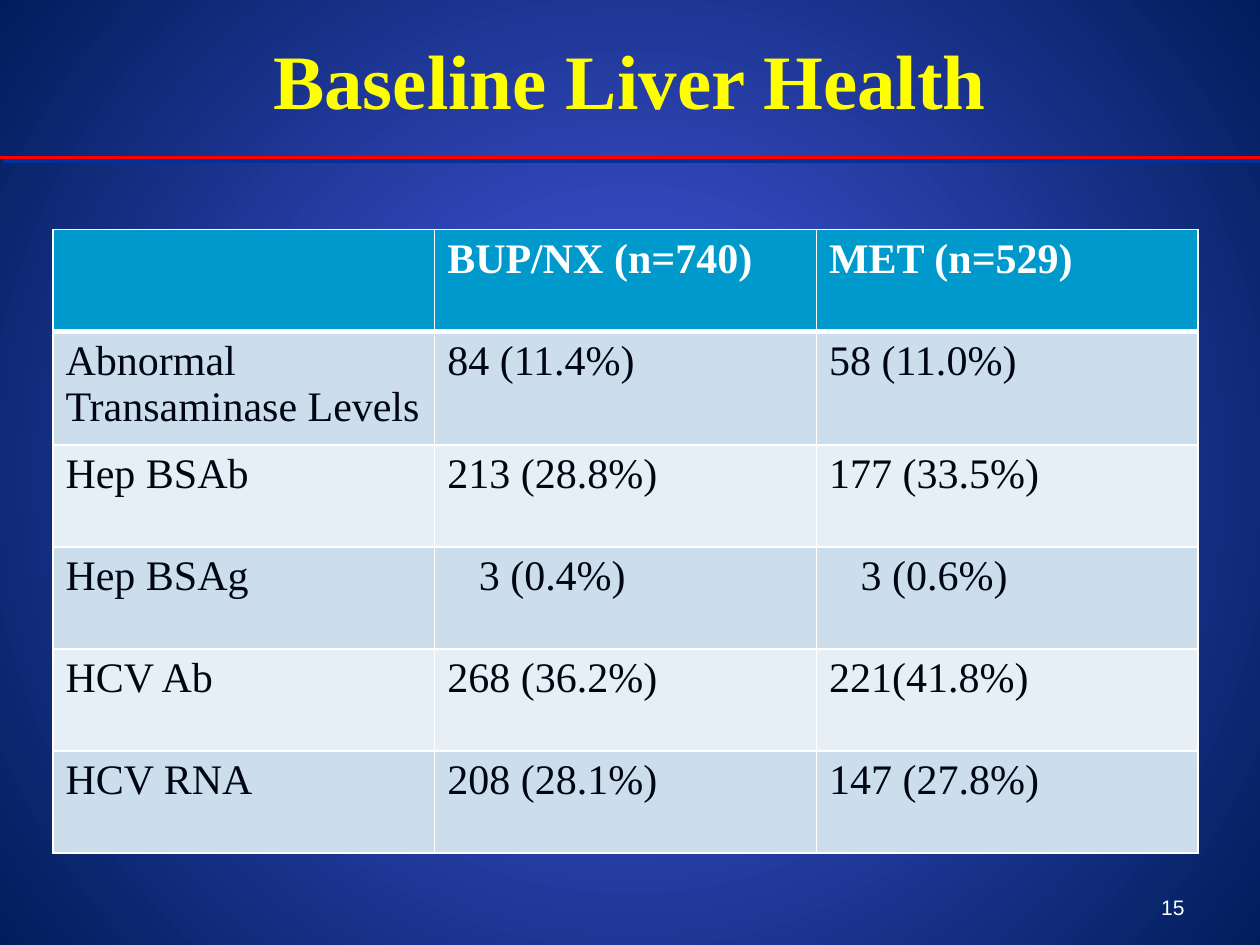
from lxml import etree
from pptx import Presentation
from pptx.dml.color import RGBColor
from pptx.enum.shapes import MSO_CONNECTOR
from pptx.enum.text import MSO_ANCHOR, PP_ALIGN
from pptx.oxml.ns import qn
from pptx.util import Inches, Pt

STRAIGHT = MSO_CONNECTOR.STRAIGHT
MIDDLE, BOTTOM = MSO_ANCHOR.MIDDLE, MSO_ANCHOR.BOTTOM
CENTER, RIGHT = PP_ALIGN.CENTER, PP_ALIGN.RIGHT

SERIF, SANS = "Times New Roman", "Arial"
TITLE = "Baseline Liver Health"
PAGE = "15"
ROWS = [
    ("", "BUP/NX (n=740)", "MET (n=529)"),
    ("Abnormal Transaminase Levels", "84 (11.4%)", "58 (11.0%)"),
    ("Hep BSAb", "213 (28.8%)", "177 (33.5%)"),
    ("Hep BSAg", "3 (0.4%)", "3 (0.6%)"),
    ("HCV Ab", "268 (36.2%)", "221(41.8%)"),
    ("HCV RNA", "208 (28.1%)", "147 (27.8%)"),
]
INDENTED_ROW = 3
HEADER_FILL, BANDS = "0099CC", ("E7EFF6", "CCDEEC")
COL_W, ROW_H = 3.03, 0.81


def rgb(value):
    return RGBColor.from_string(value)


def add_xml(parent, tag, **attrs):
    return etree.SubElement(parent, qn(tag), attrs)


def style(tf, size, font, color, bold=False, align=None):
    for p in tf.paragraphs:
        p.alignment = align
        for r in p.runs:
            r.font.size = Pt(size)
            r.font.name = font
            r.font.bold = bold
            r.font.color.rgb = rgb(color)


def add_text(slide, text, box, anchor, *look, **options):
    tf = slide.shapes.add_textbox(*map(Inches, box)).text_frame
    tf.word_wrap = True
    tf.vertical_anchor = anchor
    tf.text = text
    style(tf, *look, **options)


def add_borders(cell, top, bottom):
    tc_pr = cell._tc.get_or_add_tcPr()
    for side, width in (("L", 1), ("R", 1), ("T", top), ("B", bottom)):
        ln = add_xml(tc_pr, "a:ln" + side, w=str(Pt(width)))
        add_xml(add_xml(ln, "a:solidFill"), "a:srgbClr", val="FFFFFF")


def set_background(slide):
    fill = slide.background.fill
    fill.gradient()
    for stop, color in zip(fill.gradient_stops, ("4A5AE9", "001E5B")):
        stop.color.rgb = rgb(color)
    for stop, position in zip(fill.gradient_stops, (0, 1)):
        stop.position = position
    grad = slide._element.find(".//" + qn("a:gradFill"))
    grad.remove(grad.find(qn("a:lin")))
    circle = add_xml(grad, "a:path", path="circle")
    add_xml(circle, "a:fillToRect", l="50000", t="50000", r="50000", b="50000")


def add_rule(slide):
    rule = slide.shapes.add_connector(
        STRAIGHT, Inches(0), Inches(1.25), Inches(10), Inches(1.25))
    rule.line.color.rgb = rgb("FF0000")
    rule.line.width = Pt(2.25)
    effects = add_xml(rule._element.spPr, "a:effectLst")
    shadow = add_xml(effects, "a:outerShdw", dist=str(Pt(2.8)), dir="2700000")
    add_xml(shadow, "a:srgbClr", val="003399")


def add_results(slide):
    n_rows, n_cols = len(ROWS), len(ROWS[0])
    table = slide.shapes.add_table(
        n_rows, n_cols, Inches(0.42), Inches(1.82),
        Inches(COL_W * n_cols), Inches(ROW_H * n_rows)).table
    for col in table.columns:
        col.width = Inches(COL_W)
    for i, values in enumerate(ROWS):
        table.rows[i].height = Inches(ROW_H)
        header = i == 0
        for j, value in enumerate(values):
            cell = table.cell(i, j)
            add_borders(cell, 3 if i == 1 else 1, 3 if header else 1)
            cell.fill.solid()
            cell.fill.fore_color.rgb = rgb(HEADER_FILL if header else BANDS[i % 2])
            if i == INDENTED_ROW and j > 0:
                cell.margin_left = Inches(0.35)
            cell.text_frame.text = value
            style(cell.text_frame, 24, SERIF,
                  "FFFFFF" if header else "000514", bold=header)


def main():
    prs = Presentation()
    prs.slide_width, prs.slide_height = Inches(10), Inches(7.5)
    s = prs.slides.add_slide(prs.slide_layouts[6])
    set_background(s)
    add_text(s, TITLE, (0.5, 0, 9, 1.25), MIDDLE, 44, SERIF, "FFFF00",
             bold=True, align=CENTER)
    add_results(s)
    add_text(s, PAGE, (7.17, 6.83, 2.33, 0.52), BOTTOM, 12, SANS, "FFFFFF",
             align=RIGHT)
    add_rule(s)
    prs.save("out.pptx")


if __name__ == "__main__":
    main()
